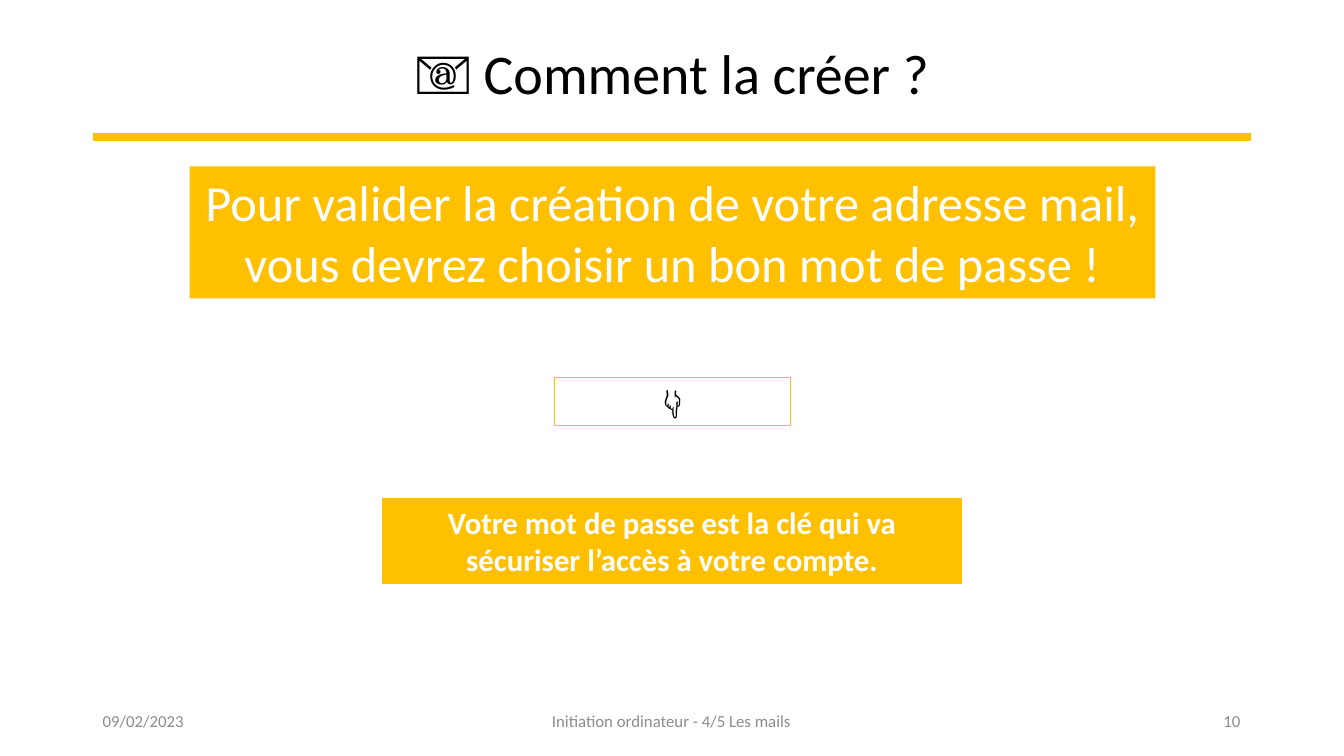
"""Build the slide on creating a mail address and choosing a password."""
from pptx import Presentation
from pptx.dml.color import RGBColor
from pptx.enum.shapes import MSO_CONNECTOR as LINE, MSO_SHAPE as SHAPE
from pptx.enum.text import MSO_ANCHOR as ANCHOR, PP_ALIGN as ALIGN
from pptx.oxml.ns import qn
from pptx.util import Pt
from lxml import etree

PX = 9144
WIDE, HIGH = 1333, 750
EDGE = 92
FONT = "Calibri"
HUES = {"gold": "FFC000", "black": "000000", "white": "FFFFFF", "gray": "8C8C8C"}

TITLE = "📧 Comment la créer ?"
BOXES = [
    ("Pour valider la création de votre adresse mail, vous devrez choisir un bon mot de passe !",
     (188, 165, 958, 131), dict(size=36, hue="white", fill="gold")),
    ("👇", (550, 375, 234, 47), dict(size=22, bold=True, line="gold")),
    ("Votre mot de passe est la clé qui va sécuriser l’accès à votre compte.",
     (379, 495, 575, 84), dict(size=22, bold=True, hue="white", fill="gold", line="gold")),
]
FOOT = [
    ("09/02/2023", 300, ALIGN.LEFT),
    ("Initiation ordinateur - 4/5 Les mails", 450, ALIGN.CENTER),
    ("10", 300, ALIGN.RIGHT),
]


def color(name):
    return RGBColor.from_string(HUES[name])


def put(slide, text, box, size=12, hue="black", bold=False, align=ALIGN.CENTER,
        anchor=ANCHOR.MIDDLE, fill=None, line=None, lead=None):
    place = [n * PX for n in box]
    if fill or line:
        shape = slide.shapes.add_shape(SHAPE.RECTANGLE, *place)
        shape.shadow.inherit = False
        anchor = ANCHOR.TOP
    else:
        shape = slide.shapes.add_textbox(*place)
    if fill:
        shape.fill.solid()
        shape.fill.fore_color.rgb = color(fill)
    else:
        shape.fill.background()
    if line:
        shape.line.color.rgb = color(line)
        shape.line.width = Pt(0.75)
    else:
        shape.line.fill.background()
    frame = shape.text_frame
    frame.word_wrap = True
    frame.vertical_anchor = anchor
    para = frame.paragraphs[0]
    para.alignment = align
    para.line_spacing = lead
    run = para.add_run()
    run.text = text
    font = run.font
    font.name, font.size, font.bold = FONT, Pt(size), bold
    font.color.rgb = color(hue)


def main():
    deck = Presentation()
    deck.slide_width, deck.slide_height = WIDE * PX, HIGH * PX
    slide = deck.slides.add_slide(deck.slide_layouts[6])
    span = WIDE - 2 * EDGE

    rule = slide.shapes.add_connector(
        LINE.STRAIGHT, EDGE * PX, 136 * PX, (EDGE + span) * PX, 136 * PX)
    rule.line.color.rgb = color("gold")
    rule.line.width = Pt(6)
    etree.SubElement(rule._element.spPr, qn("a:effectLst"))

    put(slide, TITLE, (EDGE, 3, span, 145), size=40, lead=0.9)
    for text, box, style in BOXES:
        put(slide, text, box, **style)

    gap = (span - sum(wide for _, wide, _ in FOOT)) // (len(FOOT) - 1)
    left = EDGE
    for text, wide, align in FOOT:
        put(slide, text, (left, 695, wide, 40), hue="gray", align=align)
        left += wide + gap

    deck.save("out.pptx")


if __name__ == "__main__":
    main()
